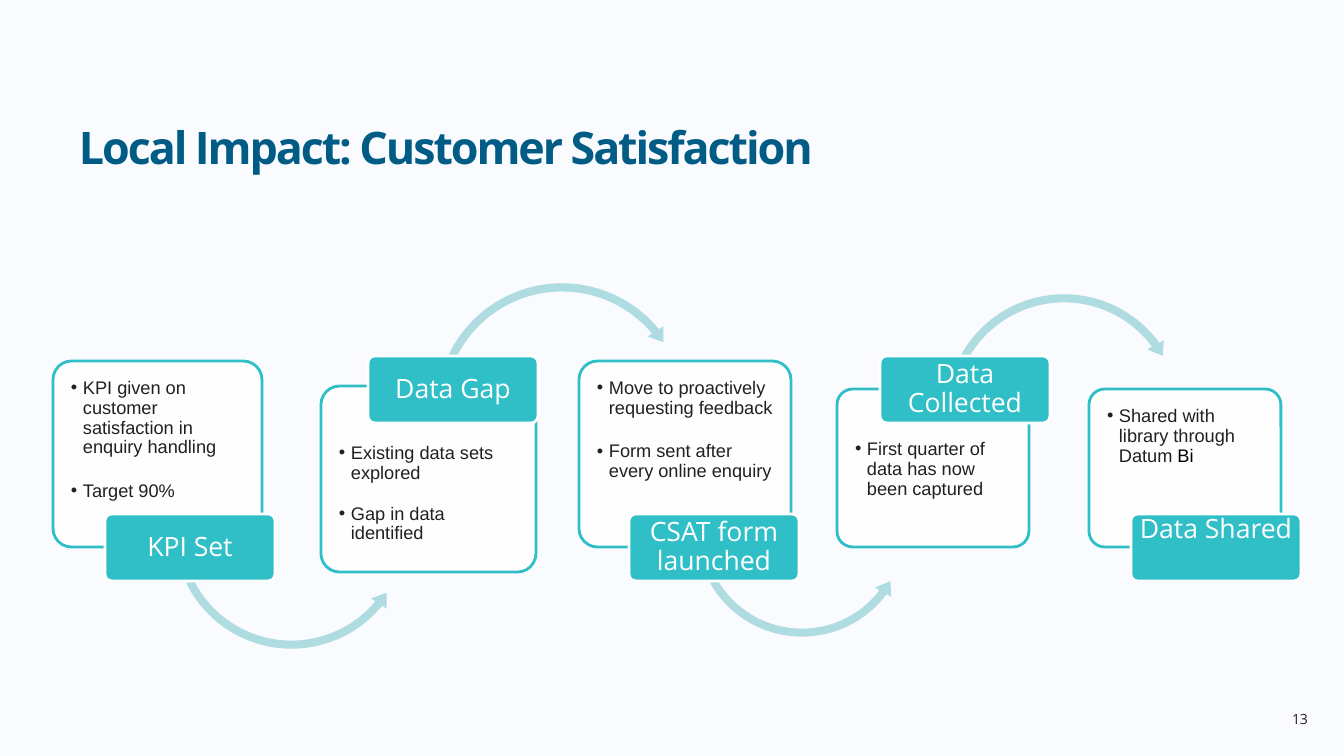
from lxml import etree
from pptx import Presentation
from pptx.dml.color import RGBColor
from pptx.enum.shapes import MSO_SHAPE
from pptx.enum.text import MSO_ANCHOR, PP_ALIGN
from pptx.oxml.ns import qn
from pptx.util import Emu, Pt

PAGE = RGBColor(0xF9, 0xFB, 0xFF)
WHITE = RGBColor(0xFF, 0xFF, 0xFF)
BLACK = RGBColor(0x00, 0x00, 0x00)
INK = RGBColor(0x23, 0x1F, 0x20)
NAVY = RGBColor(0x00, 0x5C, 0x84)
TEAL = RGBColor(0x31, 0xBF, 0xC7)
PALE_TEAL = RGBColor(0xAE, 0xDC, 0xE0)

SCALE = 914400 / 100.8  # EMU in one px


def px(length):
    return Emu(round(length * SCALE))


class FlowSlide:
    heading = {"name": "Open Sans", "size": Pt(32), "bold": True}
    label_font = {"name": "Open Sans", "size": Pt(19)}
    body_font = {"name": "Arial", "size": Pt(13)}
    number_font = {"name": "Open Sans", "size": Pt(10)}

    def __init__(self, deck):
        self.page = deck.slides.add_slide(deck.slide_layouts[6])
        self.page.background.fill.solid()
        self.page.background.fill.fore_color.rgb = PAGE

    def span(self, para, text, font, color):
        span = para.add_run()
        span.text = text
        for name, value in font.items():
            setattr(span.font, name, value)
        span.font.color.rgb = color
        return span

    def frame(self, shape, anchor, insets):
        frame = shape.text_frame
        left, top, right, bottom = map(px, insets)
        settings = {"word_wrap": True, "vertical_anchor": anchor,
                    "margin_left": left, "margin_top": top,
                    "margin_right": right, "margin_bottom": bottom}
        for name, value in settings.items():
            setattr(frame, name, value)
        return frame

    def text(self, area, text, font, color, anchor, align):
        box = self.page.shapes.add_textbox(*map(px, area))
        para = self.frame(box, anchor, (10, 5, 10, 5)).paragraphs[0]
        para.alignment = align
        return self.span(para, text, font, color)

    def shape(self, kind, area, fill, line=None, adjust=(0.1,)):
        shape = self.page.shapes.add_shape(kind, *map(px, area))
        shape.shadow.inherit = False
        shape.fill.solid()
        shape.fill.fore_color.rgb = fill
        if line is None:
            shape.line.fill.background()
        else:
            shape.line.color.rgb = line
            shape.line.width = Pt(2)
        for index, value in enumerate(adjust):
            shape.adjustments[index] = value
        return shape

    def card(self, area, label_above):
        card = self.shape(MSO_SHAPE.ROUNDED_RECTANGLE, area, WHITE, TEAL)
        color = card.fill._xPr.find(qn("a:solidFill"))[0]
        etree.SubElement(color, qn("a:alpha"), val="90000")

    def bullets(self, area, items, label_above, gap):
        left, top, width, height = area
        text_height = round(height * 0.74)
        text_top = top + height - 4 - text_height if label_above else top + 4
        box = self.page.shapes.add_textbox(
            *map(px, (left + 4, text_top, width - 8, text_height)))
        frame = self.frame(box, MSO_ANCHOR.TOP, (14, 14, 14, 14))
        for index, spans in enumerate(items):
            para = frame.add_paragraph() if index else frame.paragraphs[0]
            para.line_spacing = 0.9
            if index:
                para.space_before = Pt(gap)
            properties = para._p.get_or_add_pPr()
            properties.set("marL", str(px(12)))
            properties.set("indent", str(px(-12)))
            etree.SubElement(properties, qn("a:buFont"), typeface="Arial")
            etree.SubElement(properties, qn("a:buChar"), char="•")
            for text, color in spans:
                self.span(para, text, self.body_font, color)

    def arrow(self, area, kind, adjust):
        self.shape(kind, area, PALE_TEAL, adjust=adjust)

    def label(self, left, top, text, anchor):
        label = self.shape(MSO_SHAPE.ROUNDED_RECTANGLE,
                           (left, top, 170, 67), TEAL, WHITE)
        inset_top = 0 if anchor == MSO_ANCHOR.TOP else 3
        para = self.frame(label, anchor, (4, inset_top, 4, 3)).paragraphs[0]
        para.alignment = PP_ALIGN.CENTER
        para.line_spacing = 0.9
        self.span(para, text, self.label_font, WHITE)


# Each step: label, label left, anchor, card area, bullet gap, bullets
STEPS = [
    ("KPI Set", 105, MSO_ANCHOR.MIDDLE, (53, 361, 209, 186), 17,
     [[("KPI given on customer satisfaction in enquiry handling", INK)],
      [("Target 90%", INK)]]),
    ("Data Gap", 368, MSO_ANCHOR.MIDDLE, (321, 386, 215, 186), 15,
     [[("Existing data sets explored", INK)],
      [("Gap in data identified", INK)]]),
    ("CSAT form launched", 629, MSO_ANCHOR.MIDDLE, (579, 361, 212, 186), 17,
     [[("Move to proactively requesting feedback", INK)],
      [("Form sent after every online enquiry", INK)]]),
    ("Data Collected", 880, MSO_ANCHOR.MIDDLE, (837, 389, 192, 158), 0,
     [[("First quarter of data has now been captured", INK)]]),
    ("Data Shared", 1131, MSO_ANCHOR.TOP, (1089, 389, 192, 158), 0,
     [[("Shared with library through Datum ", INK), ("Bi", BLACK)]]),
]

# Curved arrows between neighbouring steps: left, top, side, adjustments
ARROWS = [
    (169, 409, 245, (0.033, 4.037, 23.728, 92.181, 0.038)),
    (431, 278, 262, (0.031, 3.758, 192.227, 123.496, 0.036)),
    (691, 420, 222, (0.036, 4.491, 22.226, 90.225, 0.042)),
    (941, 289, 246, (0.033, 4.009, 194.236, 125.755, 0.038)),
]


def main():
    deck = Presentation()
    deck.slide_width, deck.slide_height = px(1344), px(756)
    slide = FlowSlide(deck)

    # Title and slide number
    title = slide.text((69, 77, 1207, 102), "Local Impact: Customer Satisfaction",
                       slide.heading, NAVY, MSO_ANCHOR.BOTTOM, PP_ALIGN.LEFT)
    title.font._element.set("spc", "-150")
    slide.text((1212, 706, 106, 27), "13", slide.number_font, INK,
               MSO_ANCHOR.TOP, PP_ALIGN.RIGHT)

    # Steps, with labels alternating below and above their cards
    for index, (name, left, anchor, area, gap, items) in enumerate(STEPS):
        above = index % 2 == 1
        slide.card(area, above)
        slide.bullets(area, items, above, gap)
        if index < len(ARROWS):
            x, y, side, adjust = ARROWS[index]
            kind = (MSO_SHAPE.CIRCULAR_ARROW if above
                    else MSO_SHAPE.LEFT_CIRCULAR_ARROW)
            slide.arrow((x, y, side, side), kind, adjust)
        slide.label(left, 356 if above else 514, name, anchor)

    deck.save("out.pptx")


if __name__ == "__main__":
    main()
